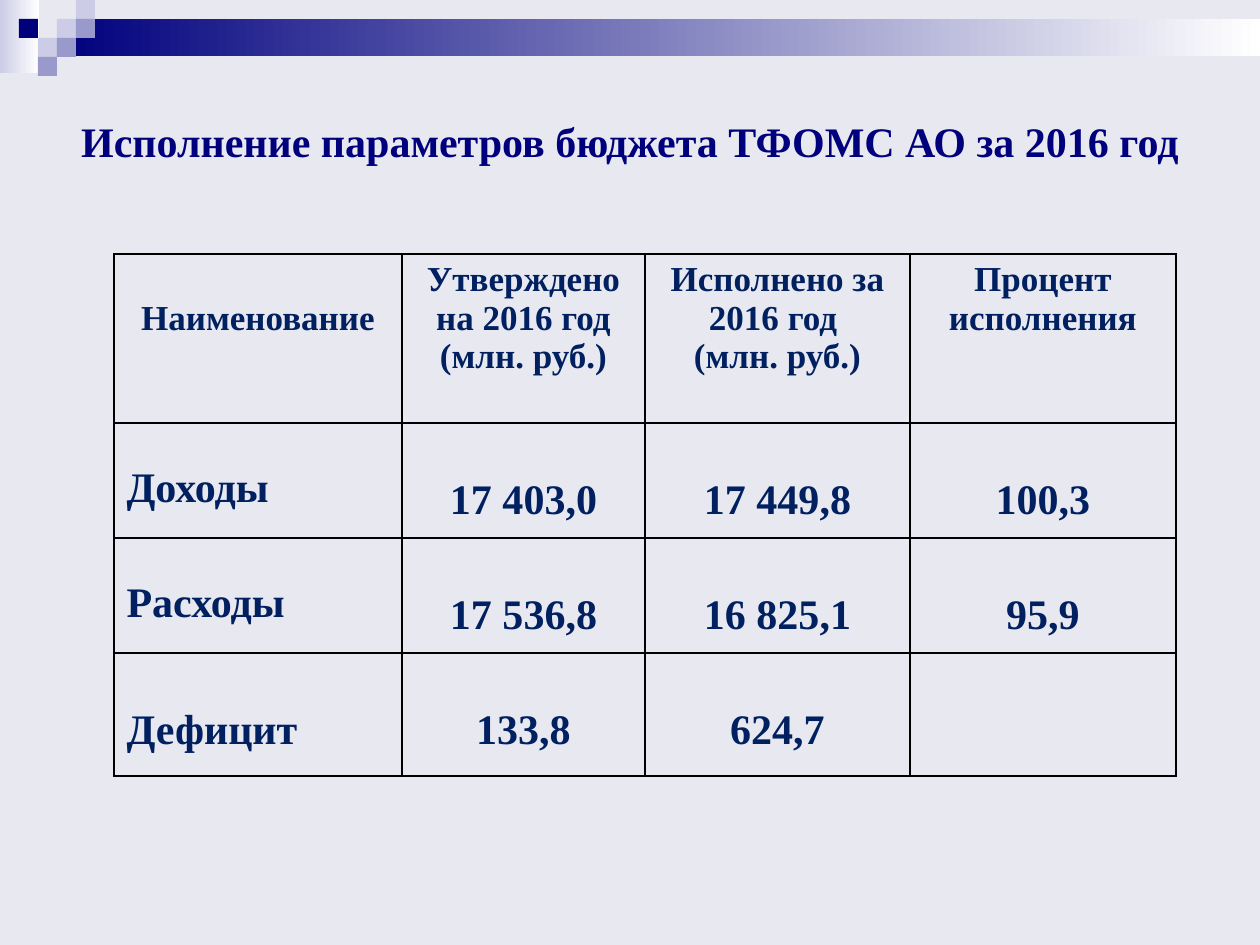
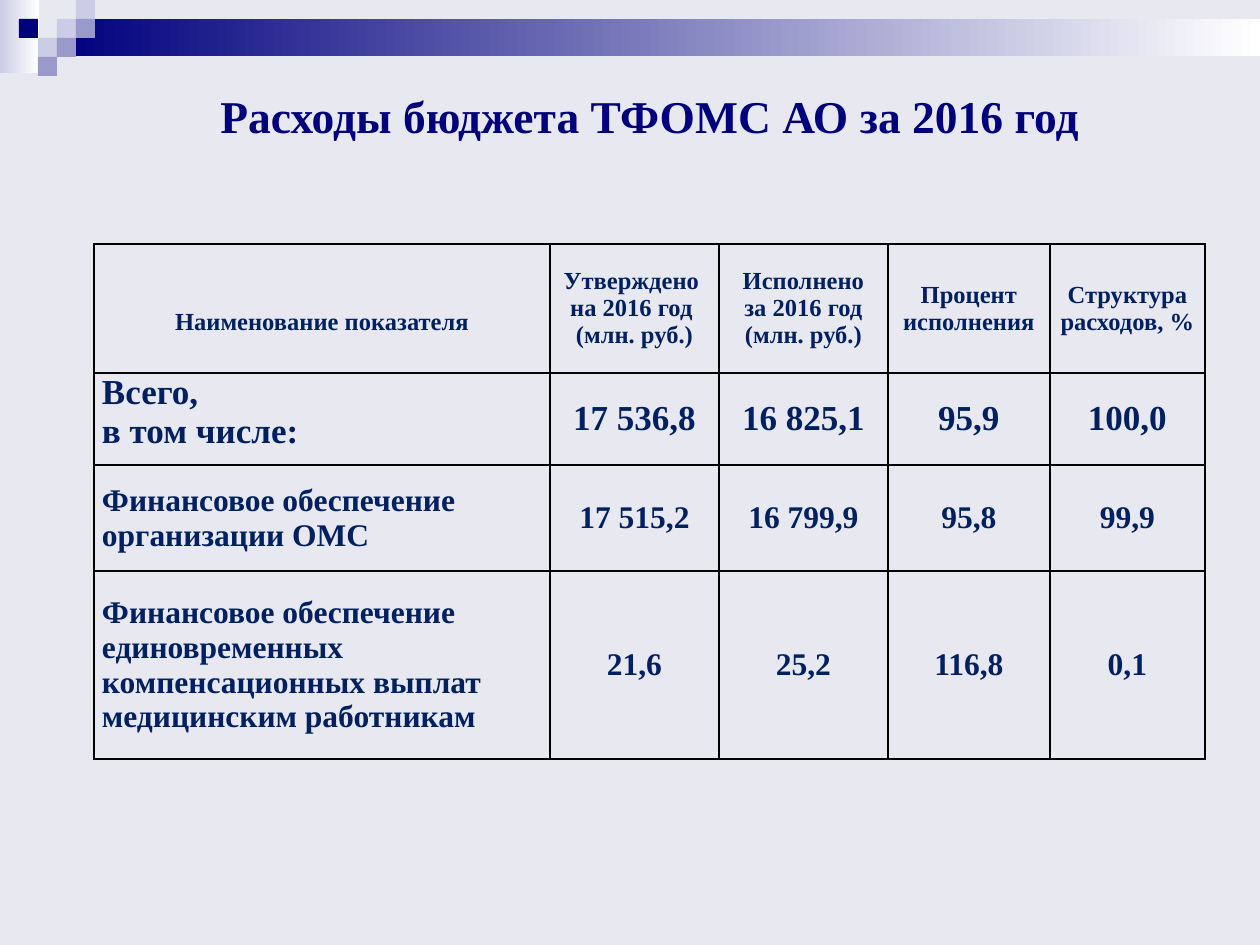
from pptx import Presentation
from pptx.dml.color import RGBColor
from pptx.enum.shapes import MSO_SHAPE
from pptx.enum.text import MSO_ANCHOR, MSO_AUTO_SIZE, PP_ALIGN
from pptx.oxml.ns import qn
from pptx.util import Emu, Pt
from lxml import etree

RECTANGLE = MSO_SHAPE.RECTANGLE
TOP, MIDDLE = MSO_ANCHOR.TOP, MSO_ANCHOR.MIDDLE
LEFT, CENTER = PP_ALIGN.LEFT, PP_ALIGN.CENTER
NO_AUTOFIT = MSO_AUTO_SIZE.NONE

PAGE_FILL = RGBColor(0xE8, 0xE8, 0xF1)
NAVY = RGBColor(0x00, 0x00, 0x7D)
LILAC = RGBColor(0xCC, 0xCC, 0xE6)
VIOLET = RGBColor(0x99, 0x99, 0xCC)
WHITE = RGBColor(0xFF, 0xFF, 0xFF)
BLACK = RGBColor(0x00, 0x00, 0x00)
TABLE_TEXT = RGBColor(0x00, 0x20, 0x60)

FONT = "Times New Roman"
PAGE_WIDTH, PAGE_HEIGHT = 1260, 945
SQUARE = 19
SQUARES = [
    (3, 1, LILAC), (4, 0, LILAC), (4, 1, VIOLET), (2, 2, LILAC),
    (1, 1, NAVY), (3, 2, VIOLET), (2, 3, VIOLET),
]

SUMMARY_ROWS = [
    ["Наименование", "Утверждено на 2016 год\n(млн. руб.)",
     "Исполнено за 2016 год \n(млн. руб.)", "Процент исполнения"],
    ["Доходы", "17 403,0", "17 449,8", "100,3"],
    ["Расходы", "17 536,8", "16 825,1", "95,9"],
    ["Дефицит", "133,8", "624,7", ""],
]
EXPENSE_ROWS = [
    ["Наименование показателя", "Утверждено \nна 2016 год \n(млн. руб.)",
     "Исполнено\nза 2016 год\n(млн. руб.)", "Процент исполнения",
     "Структура расходов, %"],
    ["Всего,\nв том числе:", "17 536,8", "16 825,1", "95,9", "100,0"],
    ["Финансовое обеспечение организации ОМС",
     "17 515,2", "16 799,9", "95,8", "99,9"],
    ["Финансовое обеспечение единовременных компенсационных выплат "
     "медицинским работникам", "21,6", "25,2", "116,8", "0,1"],
]


def px(length):
    """Turn pixels into EMU."""
    return Emu(round(length * 914400 / 126))


def add_block(page, box, *colors):
    """Add a borderless rectangle, plain or fading between two colours."""
    block = page.shapes.add_shape(RECTANGLE, *map(px, box))
    block.shadow.inherit = False
    block.line.fill.background()
    if len(colors) == 1:
        block.fill.solid()
        block.fill.fore_color.rgb = colors[0]
        return
    block.fill.gradient()
    block.fill.gradient_angle = 0
    for position, (stop, color) in enumerate(zip(block.fill.gradient_stops, colors)):
        stop.position = position
        stop.color.rgb = color


def add_header_band(page):
    """Draw the fading band and its mosaic of squares."""
    band_left = 3 * SQUARE
    add_block(page, (0, 0, 39, 73), LILAC, WHITE)
    add_block(page, (band_left, SQUARE, PAGE_WIDTH - band_left, 2 * SQUARE - 1),
              NAVY, WHITE)
    for column, row, color in SQUARES:
        add_block(page, (column * SQUARE, row * SQUARE, SQUARE, SQUARE), color)


def write_para(para, text, size, color, align):
    """Write one bold run into a paragraph."""
    para.alignment = align
    span = para.add_run()
    span.text = text
    span.font.name = FONT
    span.font.size = Pt(size)
    span.font.bold = True
    span.font.color.rgb = color


def set_title(page, box, text, size):
    """Place and format the title placeholder."""
    title = page.shapes.title
    title.left, title.top, title.width, title.height = map(px, box)
    frame = title.text_frame
    frame.auto_size = NO_AUTOFIT
    frame.word_wrap = True
    frame.vertical_anchor = MIDDLE
    write_para(frame.paragraphs[0], text, size, NAVY, CENTER)


def add_page(deck, title_box, title, size):
    """Add a page with the shared band and its title."""
    page = deck.slides.add_slide(deck.slide_layouts[5])
    add_header_band(page)
    set_title(page, title_box, title, size)
    return page


def set_borders(cell):
    """Draw a thin black line on each side of a cell."""
    properties = cell._tc.get_or_add_tcPr()
    for side in ("a:lnL", "a:lnR", "a:lnT", "a:lnB"):
        line = etree.SubElement(properties, qn(side), w=str(Pt(1)))
        fill = etree.SubElement(line, qn("a:solidFill"))
        etree.SubElement(fill, qn("a:srgbClr"), val=str(BLACK))


def fill_cell(cell, text, size, align):
    """Write the lines of a cell and set its borders."""
    set_borders(cell)
    cell.fill.background()
    frame = cell.text_frame
    for index, line in enumerate(text.split("\n") if text else []):
        para = frame.add_paragraph() if index else frame.paragraphs[0]
        write_para(para, line, size, TABLE_TEXT, align)


def add_grid(page, origin, widths, heights, rows, sizes):
    """Add a table whose row labels are aligned left below the header."""
    box = (*origin, sum(widths), sum(heights))
    table = page.shapes.add_table(len(rows), len(widths), *map(px, box)).table
    table.first_row = table.horz_banding = False
    for column, width in zip(table.columns, widths):
        column.width = px(width)
    for row, height in zip(table.rows, heights):
        row.height = px(height)
    for r, texts in enumerate(rows):
        for c, text in enumerate(texts):
            align = LEFT if r and c == 0 else CENTER
            fill_cell(table.cell(r, c), text, sizes[r], align)
    return table


def build_summary(deck):
    """Build the page of budget totals."""
    page = add_page(deck, (0, 65, PAGE_WIDTH, 151),
                    "Исполнение параметров бюджета ТФОМС АО за 2016 год", 24)
    table = add_grid(page, (114, 254), (288, 243, 265, 266), (169, 115, 115, 123),
                     SUMMARY_ROWS, (20, 24, 24, 24))
    label_tops = (45, 42, 42, 54)
    for r, label_top in enumerate(label_tops):
        for c in range(len(table.columns)):
            value_top = 54 if r else 6
            table.cell(r, c).margin_top = px(value_top if c else label_top)


def build_expenses(deck):
    """Build the page of expenses by item."""
    page = add_page(deck, (94, 65, 1112, 100),
                    "Расходы бюджета ТФОМС АО за 2016 год", 26)
    table = add_grid(page, (94, 244), (456, 169, 169, 162, 155), (129, 92, 106, 188),
                     EXPENSE_ROWS, (14, 20, 18, 18))
    for cell in table.iter_cells():
        cell.vertical_anchor = MIDDLE
        cell.margin_left = cell.margin_right = px(8)
        cell.margin_top = cell.margin_bottom = 0
    table.cell(0, 0).margin_top = px(27)
    table.cell(1, 0).vertical_anchor = TOP


def main():
    """Build and save the deck."""
    deck = Presentation()
    deck.slide_width, deck.slide_height = px(PAGE_WIDTH), px(PAGE_HEIGHT)
    background = deck.slide_master.background.fill
    background.solid()
    background.fore_color.rgb = PAGE_FILL
    build_summary(deck)
    build_expenses(deck)
    deck.save("out.pptx")


if __name__ == "__main__":
    main()
